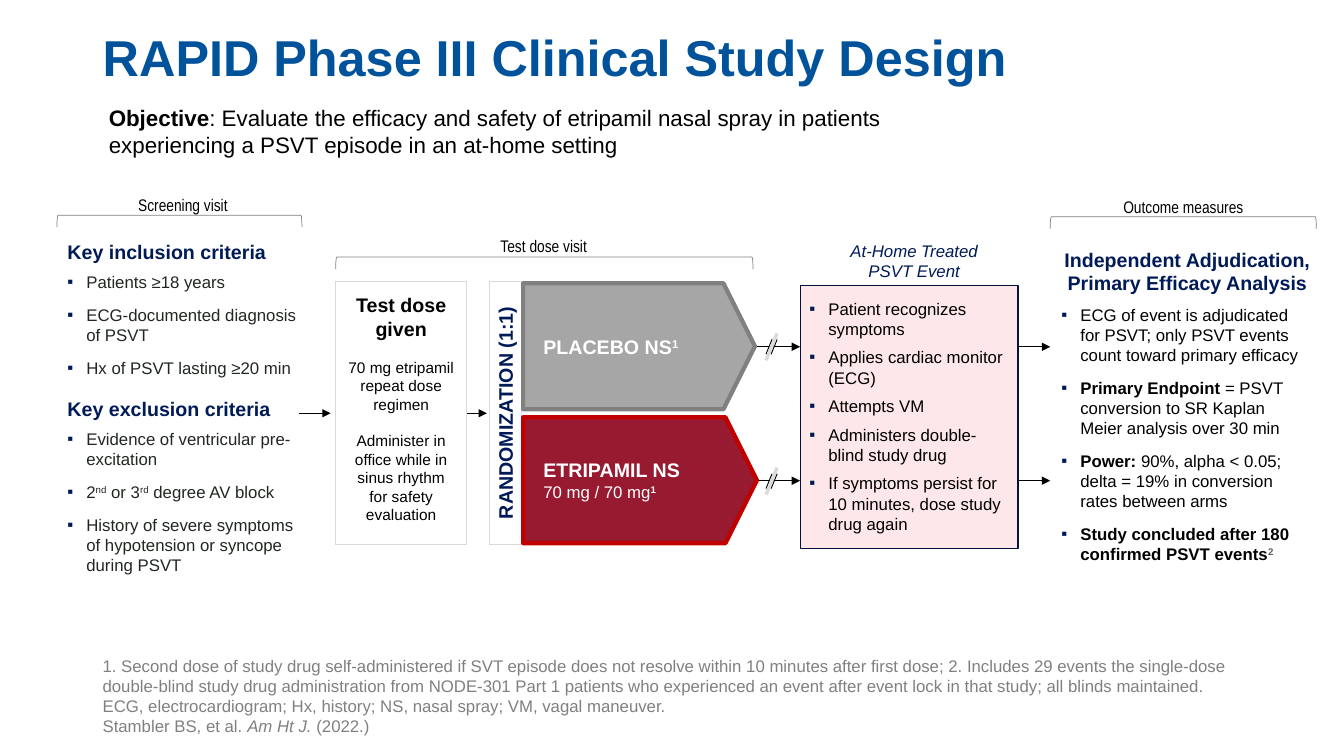
from dataclasses import dataclass

from lxml.etree import SubElement
from pptx import Presentation
from pptx.dml.color import RGBColor
from pptx.enum.shapes import MSO_CONNECTOR, MSO_SHAPE
from pptx.enum.text import MSO_ANCHOR, MSO_AUTO_SIZE, PP_ALIGN
from pptx.oxml.ns import qn
from pptx.util import Pt

COLORS = {
    "black": "000000", "white": "FFFFFF", "title": "00539B", "navy": "001A57",
    "ink": "212721", "gray": "808080", "pale": "D9D9D9", "break": "DBDBDB",
    "placebo": "A6A6A6", "drug": "981A31", "drug edge": "C00000",
    "home": "FDE7E9", "home edge": "001341", "note": "595959",
}
BULLET_INDENT = 13.5
BRACKET_HEIGHT = 8.6


def rgb(name):
    return RGBColor.from_string(COLORS[name])


@dataclass
class Line:
    """A paragraph; spans are plain text or (text, style words[, color])."""
    spans: tuple
    size: float = 12
    color: str = "black"
    bold: bool = False
    italic: bool = False
    font: str = "Arial"
    align: PP_ALIGN = PP_ALIGN.LEFT
    before: float = 0
    after: float = 0
    bullet: bool = False
    spacing: float = 1.0


class StudyPage:
    def __init__(self, page):
        self.page = page

    def fill_box(self, box, lines, anchor=MSO_ANCHOR.TOP, insets=(7.2, 3.6, 7.2, 3.6)):
        frame = box.text_frame
        frame.word_wrap = True
        frame.auto_size = MSO_AUTO_SIZE.NONE
        frame.vertical_anchor = anchor
        (frame.margin_left, frame.margin_top,
         frame.margin_right, frame.margin_bottom) = map(Pt, insets)
        for number, line in enumerate(lines):
            para = frame.add_paragraph() if number else frame.paragraphs[0]
            self.fill_paragraph(para, line)

    def fill_paragraph(self, para, line):
        para.alignment = line.align
        para.line_spacing = line.spacing
        para.space_before, para.space_after = Pt(line.before), Pt(line.after)
        properties = para._p.get_or_add_pPr()
        indent = Pt(BULLET_INDENT) if line.bullet else 0
        properties.set("marL", str(indent))
        properties.set("indent", str(-indent))
        if line.bullet:
            color = SubElement(properties, qn("a:buClr"))
            SubElement(color, qn("a:srgbClr"), val=COLORS["navy"])
            SubElement(properties, qn("a:buFont"), typeface="Arial")
            SubElement(properties, qn("a:buChar"), char="▪")
        else:
            SubElement(properties, qn("a:buNone"))
        font = para.font
        font.name, font.size = line.font, Pt(line.size)
        font.bold, font.italic = line.bold, line.italic
        font.color.rgb = rgb(line.color)
        for item in line.spans:
            text, style, *color = (item, "") if isinstance(item, str) else item
            for number, part in enumerate(text.split("\n")):
                if number:
                    para.add_line_break()
                span = para.add_run()
                span.text = part
                if "bold" in style:
                    span.font.bold = True
                if "italic" in style:
                    span.font.italic = True
                if "super" in style:
                    span._r.get_or_add_rPr().set("baseline", "30000")
                if color:
                    span.font.color.rgb = rgb(color[0])

    def text(self, bounds, lines, **options):
        self.fill_box(self.page.shapes.add_textbox(*map(Pt, bounds)), lines, **options)

    def placeholder(self, index, bounds, lines, **options):
        box = self.page.placeholders[index]
        box.left, box.top, box.width, box.height = map(Pt, bounds)
        box.element.getparent().append(box.element)  # bring to front
        self.fill_box(box, lines, **options)

    def shape(self, kind, bounds, fill, edge, width):
        shape = self.page.shapes.add_shape(kind, *map(Pt, bounds))
        shape.shadow.inherit = False
        if fill:
            shape.fill.solid()
            shape.fill.fore_color.rgb = rgb(fill)
        else:
            shape.fill.background()
        shape.line.color.rgb = rgb(edge)
        shape.line.width = Pt(width)
        return shape

    def arm(self, bounds, fill, edge, lines):
        shape = self.shape(MSO_SHAPE.RIGHT_ARROW, bounds, fill, edge, 3)
        shape.adjustments[0], shape.adjustments[1] = 1, 0.25
        self.fill_box(shape, lines, anchor=MSO_ANCHOR.MIDDLE, insets=(14.4, 3.6, 7.2, 3.6))

    def bracket(self, left, top, width):
        shift = (width - BRACKET_HEIGHT) / 2
        bounds = (left + shift, top - shift, BRACKET_HEIGHT, width)
        self.shape(MSO_SHAPE.RIGHT_BRACKET, bounds, None, "gray", 0.5).rotation = 270

    def line(self, start, end, color="black", width=0.75, arrow=False):
        line = self.page.shapes.add_connector(
            MSO_CONNECTOR.STRAIGHT, *map(Pt, (*start, *end)))
        line.line.color.rgb = rgb(color)
        line.line.width = Pt(width)
        if arrow:
            SubElement(line.element.spPr.find(qn("a:ln")), qn("a:tailEnd"), type="triangle")
        SubElement(line.element.spPr, qn("a:effectLst"))

    def break_mark(self, middle):
        for left in (547.2, 550.8):
            self.line((left + 4.3, middle - 5.3), (left, middle + 5.3))
        self.line((555.1, middle - 9.6), (547.2, middle + 9.6), "break", 2.5)


def criteria(heading, *items):
    return [Line((heading,), 14, "navy", bold=True)] + [
        Line(item, color="ink", before=9 if number else 6, bullet=True)
        for number, item in enumerate(items)]


def main():
    deck = Presentation()
    deck.slide_width, deck.slide_height = Pt(960), Pt(540)
    page = deck.slides.add_slide(deck.slide_layouts[4])
    for box in list(page.placeholders):
        if box.placeholder_format.idx > 4:
            box.element.getparent().remove(box.element)
    study = StudyPage(page)
    center = PP_ALIGN.CENTER

    # Title and objective
    study.placeholder(0, (66.2, 0, 828, 66.2), [
        Line(("RAPID Phase III Clinical Study Design",), 36, "title", bold=True, spacing=0.9),
    ], anchor=MSO_ANCHOR.BOTTOM)
    study.text((70.6, 70.6, 566, 46), [Line((
        ("Objective", "bold"),
        ": Evaluate the efficacy and safety of etripamil nasal spray in "
        "patients experiencing a PSVT episode in an at-home setting"), 16)])

    # Flow arrows
    for start, end, y in ((727.5, 750.2, 247.7), (727.5, 750.2, 343.4),
                          (528, 571.5, 247.7), (528, 571.5, 343.4),
                          (325.4, 347.8, 295.2), (213.8, 236.2, 295.2)):
        study.line((start, y), (end, y), arrow=True)

    # Visit brackets and labels
    for label, bracket, bounds in (
            ("Screening visit", (40.7, 153.7, 175), (36, 135.4, 189.4, 21.6)),
            ("Test dose visit", (239.8, 183.6, 298.1), (230.4, 164.9, 316, 21.6)),
            ("Outcome measures", (750.2, 154.8, 190.1), (744.5, 136.8, 201.6, 21.6))):
        study.bracket(*bracket)
        study.text(bounds, [Line((label,), font="Arial Narrow", align=center)])

    # Screening criteria
    study.placeholder(1, (41, 167.8, 186.5, 109.4), criteria(
        "Key inclusion criteria", ("Patients ≥18 years",),
        ("ECG-documented diagnosis of PSVT",), ("Hx of PSVT lasting ≥20 min",)))
    study.placeholder(2, (41, 280, 181.4, 139), criteria(
        "Key exclusion criteria", ("Evidence of ventricular pre-excitation",),
        ("2", ("nd", "super"), " or 3", ("rd", "super"), " degree AV block"),
        ("History of severe symptoms of hypotension or syncope during PSVT",)))

    # Test dose
    study.shape(MSO_SHAPE.RECTANGLE, (239.4, 201.2, 93.6, 187.9), "white", "pale", 0.5)
    study.text((236.2, 209.5, 100.8, 177.8), [
        Line(("Test dose given",), 14, bold=True, align=center),
        Line(("70 mg etripamil repeat dose regimen",), 11, align=center, before=12.65),
        Line(("Administer in office while in sinus rhythm\nfor safety evaluation",),
             11, align=center, before=12.65),
    ], insets=(7.2, 0, 7.2, 0))

    # Randomization and study arms
    randomization = study.shape(
        MSO_SHAPE.RECTANGLE, (349.2, 200.9, 23, 187.9), "white", "pale", 0.5)
    study.fill_box(randomization, [
        Line(("RANDOMIZATION (1:1)",), 14, "navy", bold=True, align=center),
    ], anchor=MSO_ANCHOR.MIDDLE)
    randomization.text_frame._txBody.bodyPr.set("vert", "vert270")
    study.arm((373.7, 298, 167, 90), "drug", "drug edge", [
        Line(("ETRIPAMIL NS",), 14, "white", bold=True),
        Line(("70 mg / 70 mg", ("1", "bold super")), 12, "white")])
    study.arm((373.7, 202.3, 165.6, 90), "placebo", "gray", [
        Line(("PLACEBO NS", ("1", "super")), 14, "white", bold=True)])
    for middle in (247.7, 343.7):
        study.break_mark(middle)

    # At-home event
    study.text((575.3, 168.5, 155.5, 36), [
        Line(("At-Home Treated\nPSVT Event",), color="navy", italic=True, align=center)])
    study.shape(MSO_SHAPE.RECTANGLE, (571.7, 203.8, 155.5, 187.9), "home", "home edge", 1)
    study.placeholder(3, (571, 209.5, 158.4, 177.1), [
        Line((step,), after=6, bullet=True) for step in (
            "Patient recognizes symptoms", "Applies cardiac monitor (ECG)",
            "Attempts VM", "Administers double-blind study drug",
            "If symptoms persist for 10 minutes, dose study drug again")])

    # Outcome measures
    study.text((751, 173.5, 194.4, 41), [
        Line(("Independent Adjudication,\nPrimary Efficacy Analysis",),
             14, "navy", bold=True, align=center)])
    study.placeholder(4, (751, 213.8, 189.4, 194.4), [
        Line(spans, after=9, bullet=True) for spans in (
            ("ECG of event is adjudicated for PSVT; only PSVT events count "
             "toward primary efficacy",),
            (("Primary Endpoint ", "bold"),
             "= PSVT conversion to SR Kaplan Meier analysis over 30 min"),
            (("Power:", "bold"),
             " 90%, alpha < 0.05; delta = 19% in conversion rates between arms"),
            (("Study concluded after 180 confirmed PSVT events", "bold"),
             ("2", "bold super", "note")))])

    # Footnotes
    study.text((66.2, 464.4, 855.4, 64.8), [Line(spans, color="gray") for spans in (
        ("1. Second dose of study drug self-administered if SVT episode does not resolve "
         "within 10 minutes after first dose; 2. Includes 29 events the single-dose "
         "double-blind study drug administration from NODE-301 Part 1 patients who "
         "experienced an event after event lock in that study; all blinds maintained.",),
        ("ECG, electrocardiogram; Hx, history; NS, nasal spray; VM, vagal maneuver.",),
        ("Stambler BS, et al. ", ("Am Ht J. ", "italic"), "(2022.)"))],
        anchor=MSO_ANCHOR.BOTTOM)
    deck.save("out.pptx")


if __name__ == "__main__":
    main()
